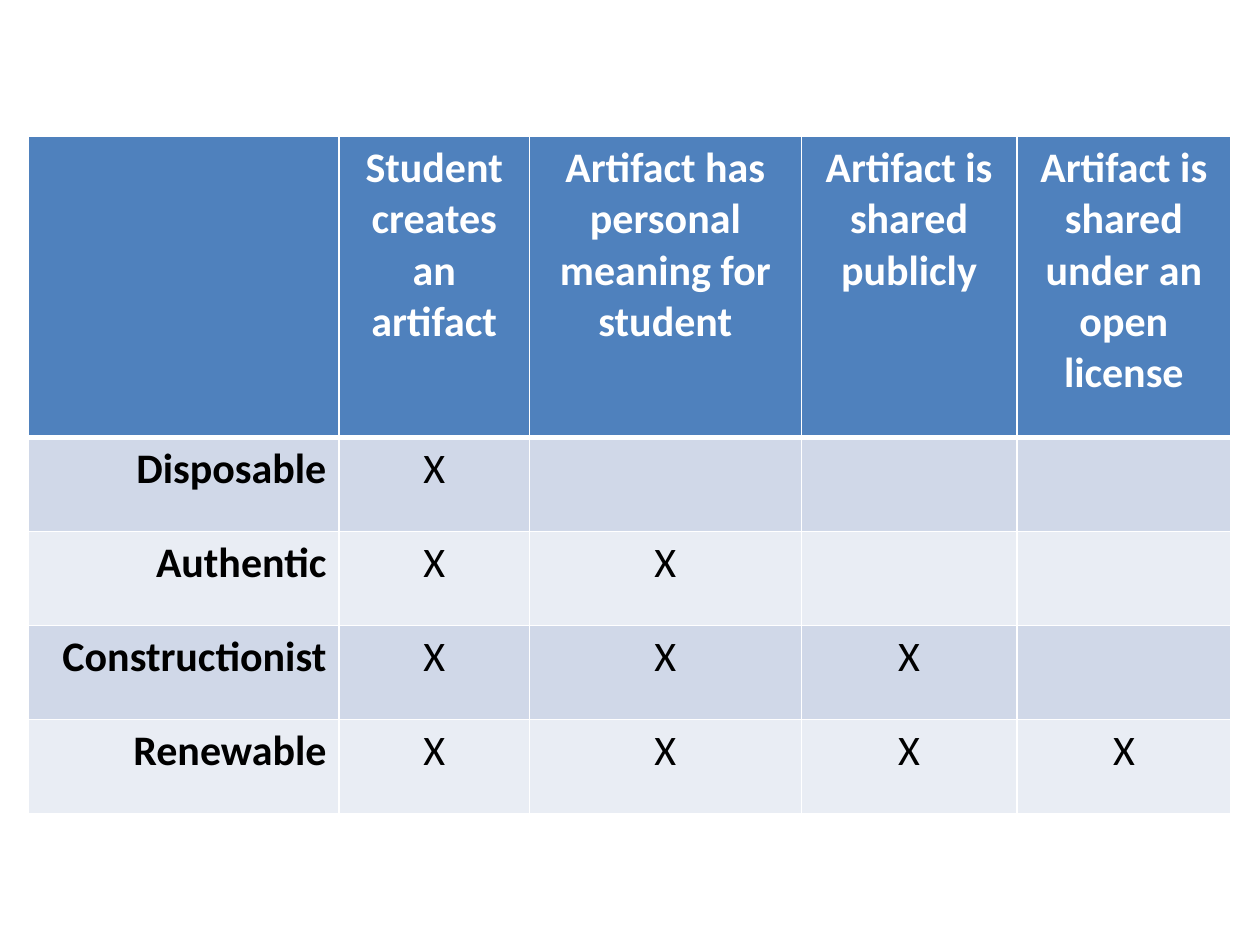
from dataclasses import dataclass

from lxml import etree
from pptx import Presentation
from pptx.dml.color import RGBColor
from pptx.enum import text
from pptx.oxml import ns
from pptx.util import Pt


@dataclass(frozen=True)
class Theme:
    font: str = "Calibri"
    size: int = 24
    header: str = "4F81BD"
    bands: tuple = ("D0D8E8", "E9EDF4")
    light: str = "FFFFFF"
    dark: str = "000000"
    rule: int = 1
    header_rule: int = 3


THEME = Theme()
CRITERIA = [
    "Student creates an artifact",
    "Artifact has personal meaning for student",
    "Artifact is shared publicly",
    "Artifact is shared under an open license",
]
ASSIGNMENTS = ["Disposable", "Authentic", "Constructionist", "Renewable"]
COLUMN_WIDTHS = [177.8, 108.7, 155.5, 123.1, 122.4]
HEADER_HEIGHT = 172


def add_border(cell, side, width):
    properties = cell._tc.get_or_add_tcPr()
    line = etree.SubElement(properties, ns.qn(f"a:ln{side}"), w=str(Pt(width)))
    fill = etree.SubElement(line, ns.qn("a:solidFill"))
    etree.SubElement(fill, ns.qn("a:srgbClr"), val=THEME.light)


def style_cell(cell, row, column):
    is_header = row == 0
    for side in "LRTB":
        heavy = (is_header and side == "B") or (row == 1 and side == "T")
        add_border(cell, side, THEME.header_rule if heavy else THEME.rule)
    band = THEME.header if is_header else THEME.bands[(row - 1) % 2]
    cell.fill.solid()
    cell.fill.fore_color.rgb = RGBColor.from_string(band)
    para = cell.text_frame.paragraphs[0]
    is_label = column == 0 and not is_header
    para.alignment = text.PP_ALIGN.RIGHT if is_label else text.PP_ALIGN.CENTER
    for span in para.runs:
        span.font.name = THEME.font
        span.font.size = Pt(THEME.size)
        span.font.bold = is_header or is_label
        color = THEME.light if is_header else THEME.dark
        span.font.color.rgb = RGBColor.from_string(color)


def add_criteria_table(page, left, top, width, height):
    rows = [["", *CRITERIA]]
    for count, name in enumerate(ASSIGNMENTS, start=1):
        rows.append([name] + ["X"] * count + [""] * (len(CRITERIA) - count))
    table = page.shapes.add_table(
        len(rows), len(rows[0]), Pt(left), Pt(top), Pt(width), Pt(height)
    ).table
    for column, share in zip(table.columns, COLUMN_WIDTHS):
        column.width = Pt(width * share / sum(COLUMN_WIDTHS))
    body_height = (height - HEADER_HEIGHT) / len(ASSIGNMENTS)
    for index, values in enumerate(rows):
        table.rows[index].height = Pt(body_height if index else HEADER_HEIGHT)
        for column, value in enumerate(values):
            cell = table.cell(index, column)
            cell.text_frame.text = value
            style_cell(cell, index, column)


def main():
    deck = Presentation()
    deck.slide_width, deck.slide_height = Pt(720), Pt(540)
    page = deck.slides.add_slide(deck.slide_layouts[6])
    add_criteria_table(page, left=16, top=78, width=687.5, height=386.8)
    deck.save("out.pptx")


if __name__ == "__main__":
    main()
